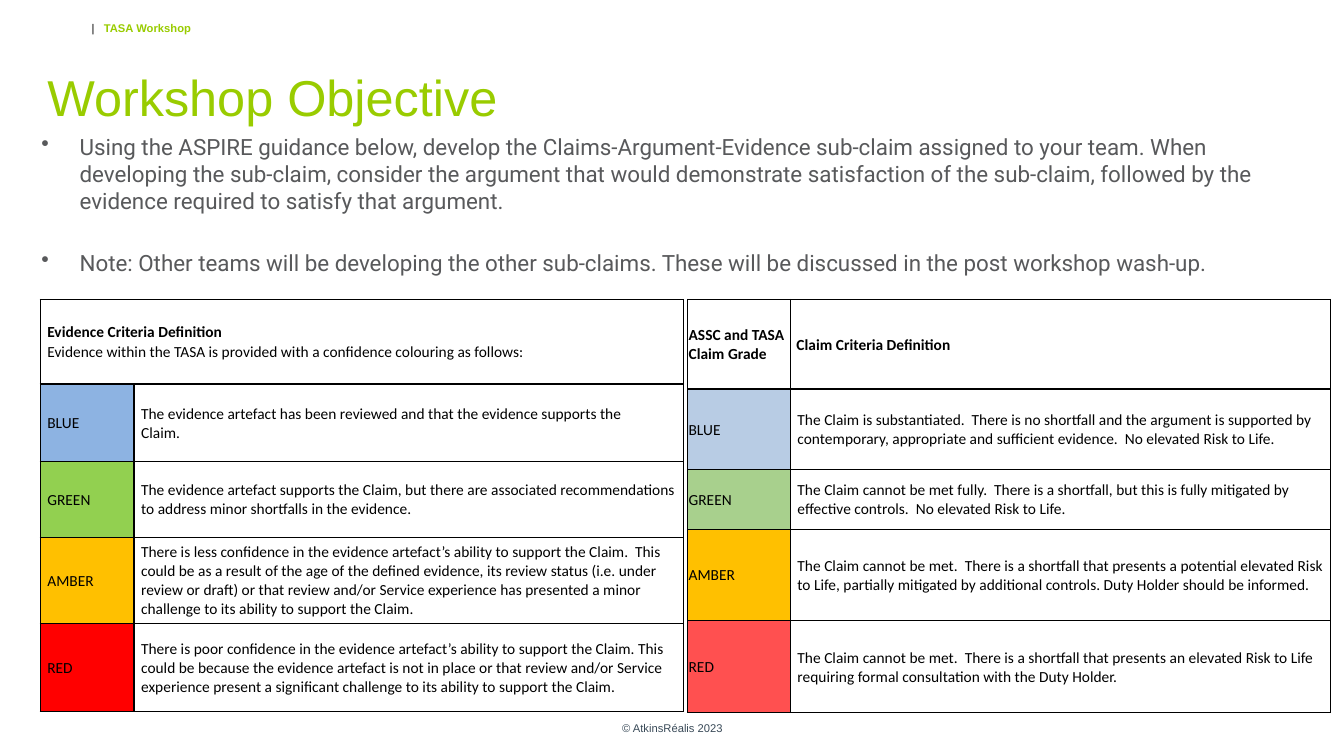
import pptx
import pptx.dml.color
import pptx.enum.text
import pptx.oxml
import pptx.oxml.ns
import pptx.util
from pptx.util import Inches

ANCHOR = pptx.enum.text.MSO_ANCHOR
ALIGN = pptx.enum.text.PP_ALIGN
GREEN, BLACK, GREY, SLATE = "99CC00", "000000", "58595B", "394A58"

HEADER = {"name": "Arial", "size": 8, "bold": True}
FOOTER = {"name": "Arial", "size": 8}
TITLE = {"name": "Arial", "size": 36}
BODY = {"name": "Roboto", "size": 16}
CELL = {"name": "Calibri", "size": 11, "bold": False}
CELL_HEADING = {**CELL, "bold": True}

OBJECTIVES = [
    "Using the ASPIRE guidance below, develop the Claims-Argument-Evidence sub-claim assigned to your team. When developing the sub-claim, consider the argument that would demonstrate satisfaction of the sub-claim, followed by the evidence required to satisfy that argument.",
    "Note: Other teams will be developing the other sub-claims. These will be discussed in the post workshop wash-up.",
]
EVIDENCE_HEADING = ["Evidence Criteria Definition",
                    "Evidence within the TASA is provided with a confidence colouring as follows:"]
EVIDENCE_GRADES = [
    ("BLUE", "8DB3E2", "The evidence artefact has been reviewed and that the evidence supports the \vClaim."),
    ("GREEN", "92D050", "The evidence artefact supports the Claim, but there are associated recommendations to address minor shortfalls in the evidence."),
    ("AMBER", "FFC000", "There is less confidence in the evidence artefact’s ability to support the Claim.  This could be as a result of the age of the defined evidence, its review status (i.e. under review or draft) or that review and/or Service experience has presented a minor challenge to its ability to support the Claim."),
    ("RED", "FF0000", "There is poor confidence in the evidence artefact’s ability to support the Claim. This could be because the evidence artefact is not in place or that review and/or Service experience present a significant challenge to its ability to support the Claim."),
]
CLAIM_GRADES = [
    ("BLUE", "B8CCE4", "The Claim is substantiated.  There is no shortfall and the argument is supported by contemporary, appropriate and sufficient evidence.  No elevated Risk to Life."),
    ("GREEN", "A8D08D", "The Claim cannot be met fully.  There is a shortfall, but this is fully mitigated by effective controls.  No elevated Risk to Life."),
    ("AMBER", "FFC000", "The Claim cannot be met.  There is a shortfall that presents a potential elevated Risk to Life, partially mitigated by additional controls. Duty Holder should be informed."),
    ("RED", "FF5050", "The Claim cannot be met.  There is a shortfall that presents an elevated Risk to Life requiring formal consultation with the Duty Holder."),
]


def colour(value):
    return pptx.dml.color.RGBColor.from_string(value)


def format_para(para, formats, ink):
    for span in para.runs:
        for key, value in formats.items():
            setattr(span.font, key, pptx.util.Pt(value) if key == "size" else value)
        span.font.color.rgb = colour(ink)


def add_box(page, left, top, width, height):
    box = page.shapes.add_textbox(Inches(left), Inches(top), Inches(width), Inches(height))
    frame = box.text_frame
    frame.word_wrap = True
    for side in ("left", "top", "right", "bottom"):
        setattr(frame, f"margin_{side}", 0)
    return frame


def add_header(page, left, top, width, height):
    para = add_box(page, left, top, width, height).paragraphs[0]
    stops = pptx.oxml.parse_xml(f'<a:tabLst {pptx.oxml.ns.nsdecls("a")}><a:tab pos="{Inches(0.12)}" algn="l"/></a:tabLst>')
    para._p.get_or_add_pPr().append(stops)
    para.text = "|\t"
    format_para(para, FOOTER, BLACK)
    label = para.add_run()
    label.text = "TASA Workshop"
    for key, value in HEADER.items():
        setattr(label.font, key, pptx.util.Pt(value) if key == "size" else value)
    label.font.color.rgb = colour(GREEN)


def add_title(page, left, top, width, height):
    title = page.shapes.title
    for key, value in {"left": left, "top": top, "width": width, "height": height}.items():
        setattr(title, key, Inches(value))
    title.text_frame.text = "Workshop Objective"
    title.text_frame.vertical_anchor = ANCHOR.MIDDLE
    para = title.text_frame.paragraphs[0]
    para.alignment = ALIGN.LEFT
    format_para(para, TITLE, GREEN)


def add_objectives(page, left, top, width, height):
    frame = add_box(page, left, top, width, height)
    for index, text in enumerate(OBJECTIVES):
        para = frame.add_paragraph() if index else frame.paragraphs[0]
        properties = para._p.get_or_add_pPr()
        properties.set("marL", str(Inches(0.38)))
        properties.set("indent", str(-Inches(0.38)))
        properties.append(pptx.oxml.parse_xml(f'<a:buChar {pptx.oxml.ns.nsdecls("a")} char="•"/>'))
        if index:
            para.space_before = pptx.util.Pt(25)
        para.text = text
        format_para(para, BODY, GREY)


def add_footer(page, left, top, width, height):
    frame = add_box(page, left, top, width, height)
    frame.vertical_anchor = ANCHOR.MIDDLE
    para = frame.paragraphs[0]
    para.text = "© AtkinsRéalis 2023"
    para.alignment = ALIGN.CENTER
    format_para(para, FOOTER, SLATE)


def fill_cell(cell, lines, margin, heading=False, fill=None):
    for side in ("L", "R", "T", "B"):
        cell._tc.get_or_add_tcPr().append(pptx.oxml.parse_xml(
            f'<a:ln{side} {pptx.oxml.ns.nsdecls("a")} w="{pptx.util.Pt(1)}">'
            f'<a:solidFill><a:srgbClr val="{BLACK}"/></a:solidFill></a:ln{side}>'))
    if fill:
        cell.fill.solid()
        cell.fill.fore_color.rgb = colour(fill)
    else:
        cell.fill.background()
    cell.vertical_anchor = ANCHOR.MIDDLE
    margins = {"left": margin, "right": margin, "top": 0.01, "bottom": 0}
    for side, value in margins.items():
        setattr(cell, f"margin_{side}", Inches(value))
    for index, text in enumerate(lines):
        para = cell.text_frame.add_paragraph() if index else cell.text_frame.paragraphs[0]
        para.text = text
        format_para(para, CELL_HEADING if heading and not index else CELL, BLACK)


def add_grade_table(page, left, top, columns, rows, headings, grades, grade_margin):
    table = page.shapes.add_table(len(rows), len(columns), Inches(left), Inches(top),
                                  Inches(sum(columns)), Inches(sum(rows))).table
    table.first_row = table.horz_banding = False
    for column, width in zip(table.columns, columns):
        column.width = Inches(width)
    for row, height in zip(table.rows, rows):
        row.height = Inches(height)
    for index, (lines, margin) in enumerate(headings):
        fill_cell(table.cell(0, index), lines, margin, heading=True)
    if not headings[-1][0]:
        table.cell(0, 0).merge(table.cell(0, 1))
    for index, (grade, fill, definition) in enumerate(grades, 1):
        fill_cell(table.cell(index, 0), [grade], grade_margin, fill=fill)
        fill_cell(table.cell(index, 1), [definition], 0.07)


def main():
    deck = pptx.Presentation()
    deck.slide_width, deck.slide_height = Inches(13.33), Inches(7.5)
    page = deck.slides.add_slide(deck.slide_layouts.get_by_name("Title Only"))
    add_header(page, 0.91, 0.21, 10.26, 0.34)
    add_footer(page, 4.56, 7.02, 4.22, 0.4)
    add_objectives(page, 0.41, 1.32, 12.52, 1.55)
    add_title(page, 0.37, 0.6, 12.08, 0.71)
    add_grade_table(page, 0.4, 2.97, [0.93, 5.45], [0.84, 0.77, 0.75, 0.86, 0.87],
                    [(EVIDENCE_HEADING, 0.07), ([], 0.07)], EVIDENCE_GRADES, 0.07)
    add_grade_table(page, 6.82, 2.97, [1.02, 5.36], [0.89, 0.8, 0.59, 0.91, 0.91],
                    [(["ASSC and TASA Claim Grade"], 0.01), (["Claim Criteria Definition"], 0.06)],
                    CLAIM_GRADES, 0.01)
    deck.save("out.pptx")


if __name__ == "__main__":
    main()
